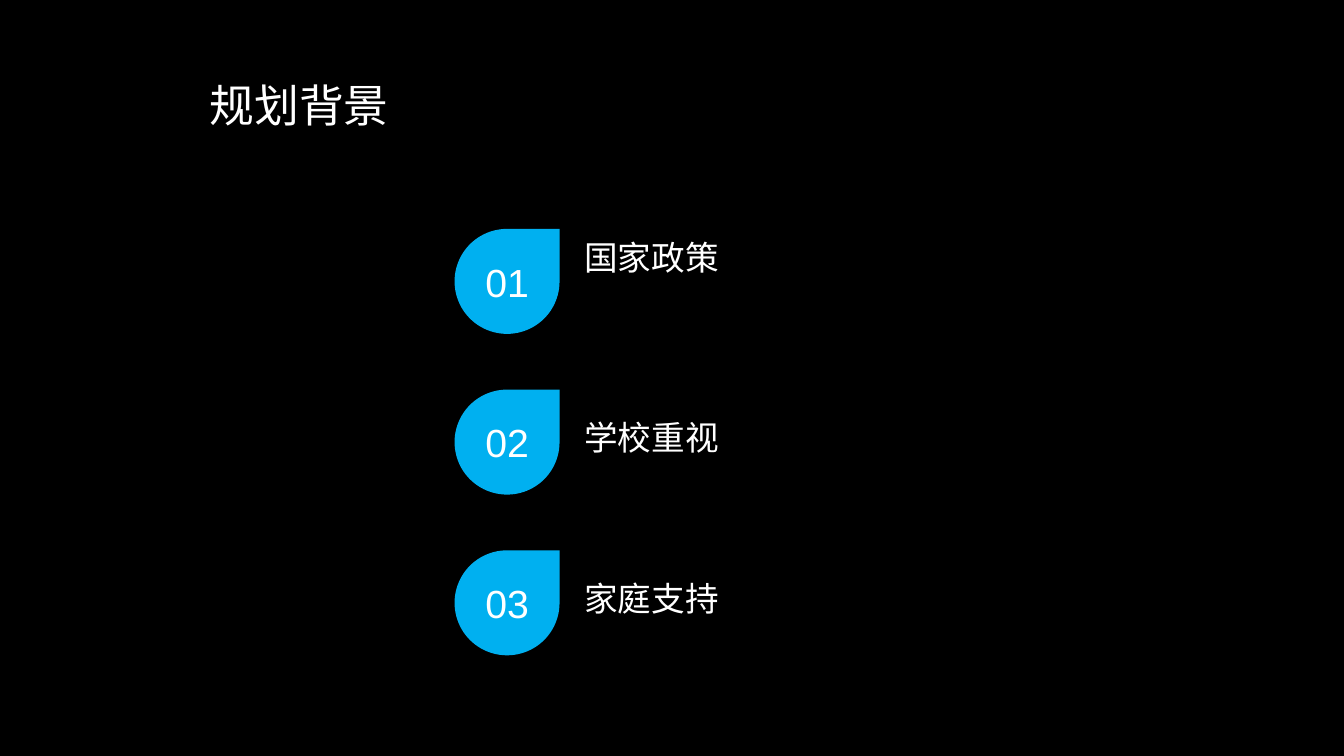
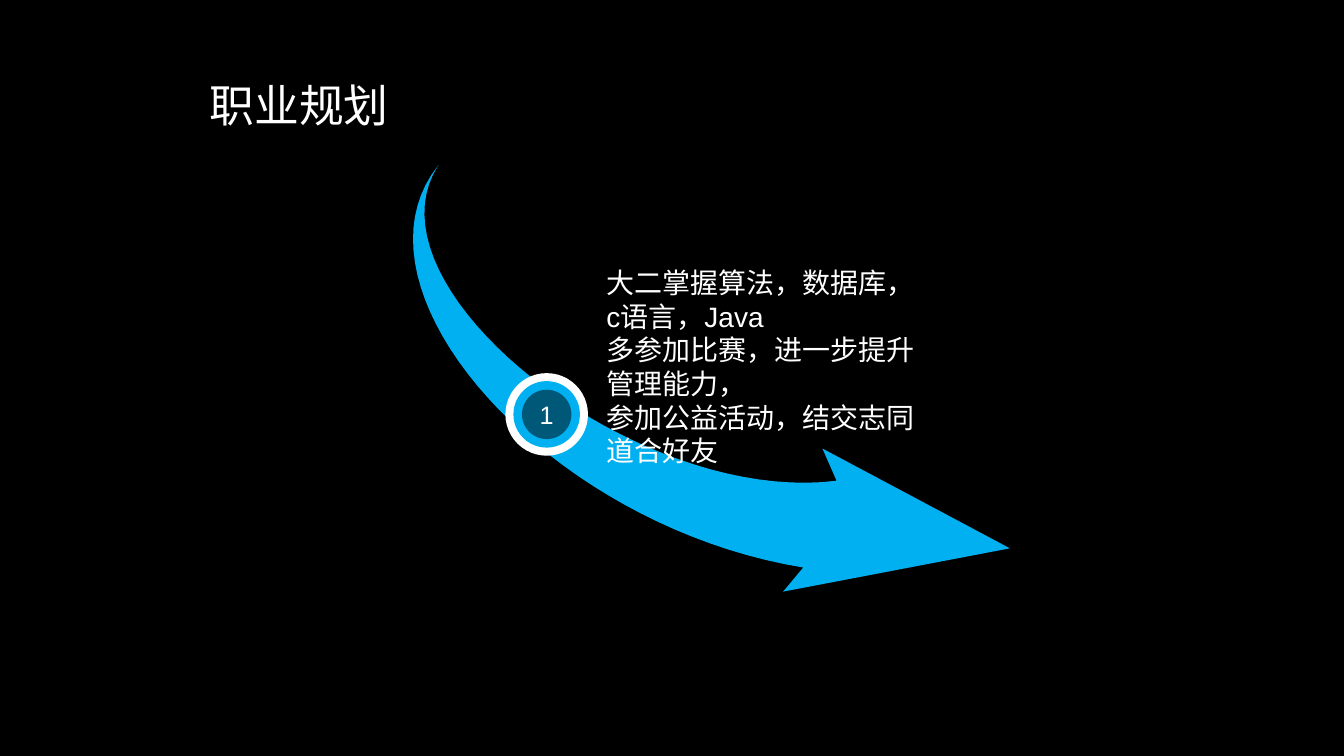
from pptx import Presentation
from pptx.util import Pt
from pptx.dml.color import RGBColor as RGB
from pptx.enum.shapes import MSO_SHAPE as Kind
from pptx.enum.text import PP_ALIGN as Align, MSO_ANCHOR as Anchor, MSO_AUTO_SIZE as Auto

HUES = {"back": "000000", "text": "FFFFFF", "blue": "00B0F0", "deep": "005878"}
FONT = "Arial"
STEPS = 40


def paint(fill, hue):
    fill.solid()
    fill.fore_color.rgb = RGB.from_string(HUES[hue])


def write(frame, lines, size, align=Align.LEFT, gap=None):
    frame.word_wrap = True
    frame.auto_size = Auto.NONE
    frame.vertical_anchor = Anchor.MIDDLE
    for i, line in enumerate(lines):
        para = frame.paragraphs[0] if i == 0 else frame.add_paragraph()
        para.alignment = align
        if gap:
            para.line_spacing = gap
        run = para.add_run()
        run.text = line
        run.font.size = Pt(size)
        run.font.name = FONT
        run.font.color.rgb = RGB.from_string(HUES["text"])


def finish(shape, hue):
    shape.shadow.inherit = False
    paint(shape.fill, hue)
    shape.line.fill.background()
    return shape


def add_badge(slide, kind, left, top, side, hue, text=None, size=18):
    shape = finish(slide.shapes.add_shape(kind, Pt(left), Pt(top), Pt(side), Pt(side)), hue)
    if text:
        frame = shape.text_frame
        frame.margin_left = frame.margin_right = 0
        frame.margin_top = frame.margin_bottom = 0
        write(frame, [text], size, Align.CENTER)


def add_label(slide, left, top, width, height, lines, size):
    box = slide.shapes.add_textbox(Pt(left), Pt(top), Pt(width), Pt(height))
    write(box.text_frame, lines, size)


def add_page(deck, title):
    slide = deck.slides.add_slide(deck.slide_layouts[5])
    head = slide.shapes.title
    head.left, head.top, head.width, head.height = Pt(142.5), Pt(25.2), Pt(410), Pt(104.4)
    write(head.text_frame, [title], 32, gap=0.9)
    return slide


def add_list(slide, left, top, items):
    side, pitch = 75, 114.8
    for i, (name, lift) in enumerate(items):
        y = top + i * pitch
        add_badge(slide, Kind.TEAR, left, y, side, "blue", f"{i + 1:02d}", 28)
        add_label(slide, left + 85.5, y + 1.4 - lift, 215, 65.5, [name], 24)


def curve(a, b, c, d):
    spots = []
    for i in range(1, STEPS + 1):
        t = i / STEPS
        s = 1 - t
        spots.append(tuple(
            s ** 3 * p + 3 * s * s * t * q + 3 * s * t * t * u + t ** 3 * v
            for p, q, u, v in zip(a, b, c, d)))
    return spots


def add_arrow(slide, left, top):
    tail = (18.2, 0)
    inner = curve(tail, (-38.7, 87.2), (159.3, 243.4), (302.6, 225.4))
    head = [(292.5, 202.4), (426.4, 273.7), (264.4, 304.6), (278.8, 287.4)]
    outer = curve(head[-1], (96.7, 257.8), (-53.1, 89.4), tail)
    start, *rest = [(Pt(left + x), Pt(top + y)) for x, y in [tail, *inner, *head, *outer]]
    pen = slide.shapes.build_freeform(*start)
    pen.add_line_segments(rest, close=True)
    finish(pen.convert_to_shape(), "blue")


def add_target(slide, x, y, text):
    for side, hue, mark in ((59, "text", None), (47.5, "blue", None), (35.3, "deep", text)):
        add_badge(slide, Kind.OVAL, x - side / 2, y - side / 2, side, hue, mark)


def main():
    deck = Presentation()
    deck.slide_width, deck.slide_height = Pt(960), Pt(540)
    paint(deck.slide_master.background.fill, "back")

    causes = add_page(deck, "规划背景")
    add_list(causes, 324.7, 163.5, [("国家政策", 14), ("学校重视", 0), ("家庭支持", 0)])

    career = add_page(deck, "职业规划")
    add_arrow(career, 295, 118)
    add_target(career, 390.5, 296, "1")
    add_label(career, 426, 226.8, 237, 70, [
        "大二掌握算法，数据库，c语言，Java",
        "多参加比赛，进一步提升管理能力，",
        "参加公益活动，结交志同道合好友",
    ], 20)

    deck.save("out.pptx")


if __name__ == "__main__":
    main()
